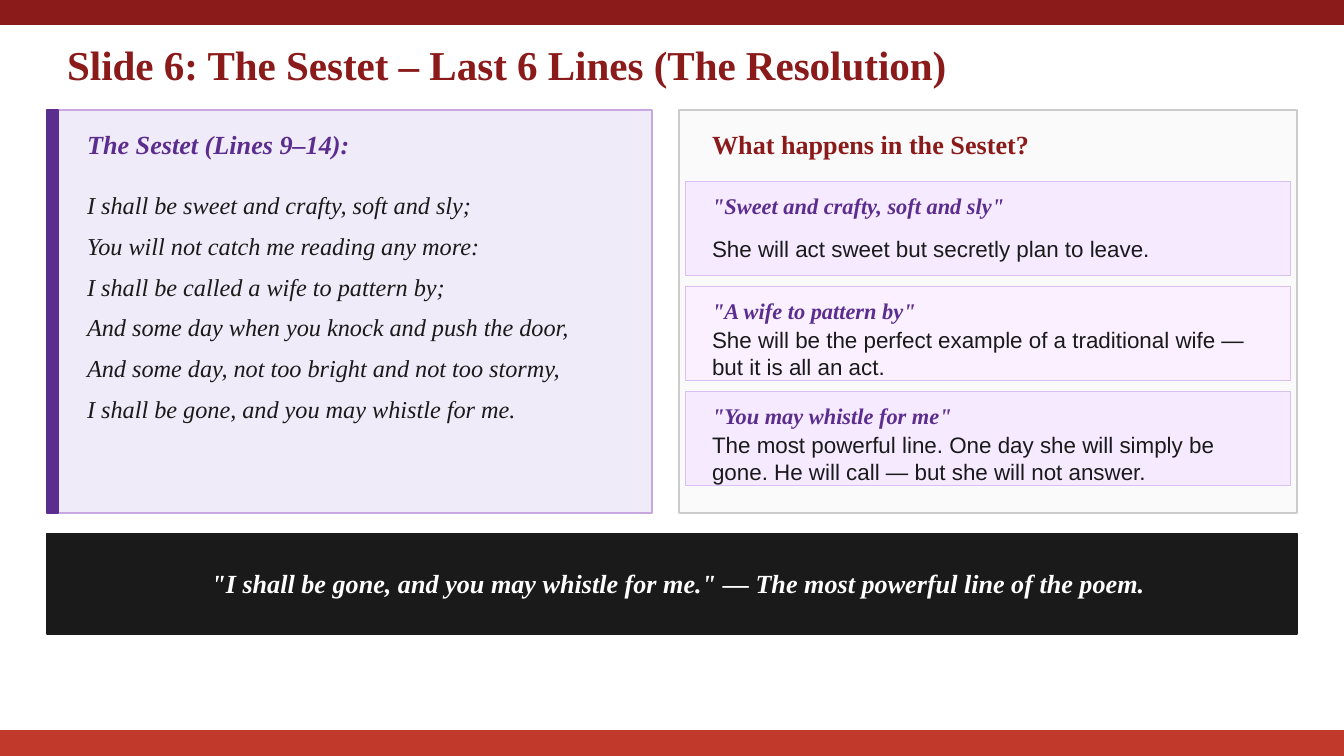
import pptx
import pptx.dml.color
import pptx.enum.shapes
import pptx.enum.text
import pptx.util

Inches = pptx.util.Inches
Pt = pptx.util.Pt
RGBColor = pptx.dml.color.RGBColor
ALIGN = pptx.enum.text.PP_ALIGN
ANCHOR = pptx.enum.text.MSO_ANCHOR

SERIF = "Times New Roman"
SANS = "Arial"
MAROON = RGBColor(0x8B, 0x1A, 0x1A)
RED = RGBColor(0xC0, 0x39, 0x2B)
PURPLE = RGBColor(0x5B, 0x2D, 0x8E)
LAVENDER = RGBColor(0xF0, 0xEB, 0xF8)
LILAC = RGBColor(0xC8, 0xA8, 0xE0)
PALE_LILAC = RGBColor(0xD8, 0xC0, 0xF0)
CARD_VIOLET = RGBColor(0xF5, 0xEA, 0xFF)
CARD_PINK = RGBColor(0xFA, 0xF0, 0xFF)
OFF_WHITE = RGBColor(0xFA, 0xFA, 0xFA)
GREY = RGBColor(0xCC, 0xCC, 0xCC)
INK = RGBColor(0x1A, 0x1A, 0x1A)
WHITE = RGBColor(0xFF, 0xFF, 0xFF)

deck = pptx.Presentation()
deck.slide_width = Inches(10)
deck.slide_height = Inches(10 * 9 / 16)
page = deck.slides.add_slide(deck.slide_layouts[5])


def add_panel(left, top, width, height, fill, line, weight=1):
    panel = page.shapes.add_shape(
        pptx.enum.shapes.MSO_SHAPE.RECTANGLE,
        Inches(left), Inches(top), Inches(width), Inches(height))
    panel.shadow.inherit = False
    panel.fill.solid()
    panel.fill.fore_color.rgb = fill
    panel.line.color.rgb = line
    panel.line.width = Pt(weight)


def write(left, top, width, height, lines, size, color, font=SERIF, bold=False,
          italic=False, align=ALIGN.LEFT, anchor=ANCHOR.MIDDLE, spacing=None, box=None):
    """Fill the given box, or a new text box, with one paragraph per line."""
    if box is None:
        box = page.shapes.add_textbox(0, 0, 0, 0)
    box.left, box.top = Inches(left), Inches(top)
    box.width, box.height = Inches(width), Inches(height)
    frame = box.text_frame
    frame.text = "\n".join(lines)
    frame.word_wrap = True
    frame.auto_size = pptx.enum.text.MSO_AUTO_SIZE.NONE
    frame.vertical_anchor = anchor
    for para in frame.paragraphs:
        para.alignment = align
        para.line_spacing = spacing
        para.font.name = font
        para.font.size = Pt(size)
        para.font.bold = bold
        para.font.italic = italic
        para.font.color.rgb = color


# Top and bottom bands, title
add_panel(0, 0, 10, 0.18, MAROON, MAROON)
add_panel(0, 5.44, 10, 0.18, RED, RED)
write(0.4, 0.25, 9.2, 0.45, ["Slide 6: The Sestet – Last 6 Lines (The Resolution)"],
      22, MAROON, bold=True, box=page.shapes.title)

# Poem
add_panel(0.35, 0.82, 4.5, 3, LAVENDER, LILAC)
add_panel(0.35, 0.82, 0.08, 3, PURPLE, PURPLE)
write(0.55, 0.9, 4.1, 0.35, ["The Sestet (Lines 9–14):"], 14, PURPLE, bold=True, italic=True)
poem = [
    "I shall be sweet and crafty, soft and sly;",
    "You will not catch me reading any more:",
    "I shall be called a wife to pattern by;",
    "And some day when you knock and push the door,",
    "And some day, not too bright and not too stormy,",
    "I shall be gone, and you may whistle for me.",
]
write(0.55, 1.28, 4.1, 2.4, poem, 13, INK, italic=True, anchor=ANCHOR.TOP, spacing=1.4)

# Explanation cards
add_panel(5.05, 0.82, 4.6, 3, OFF_WHITE, GREY)
write(5.2, 0.9, 4.3, 0.35, ["What happens in the Sestet?"], 14, MAROON, bold=True)
cards = [
    ('"Sweet and crafty, soft and sly"',
     "She will act sweet but secretly plan to leave.", CARD_VIOLET),
    ('"A wife to pattern by"',
     "She will be the perfect example of a traditional wife — but it is all an act.",
     CARD_PINK),
    ('"You may whistle for me"',
     "The most powerful line. One day she will simply be gone. "
     "He will call — but she will not answer.", CARD_VIOLET),
]
for index, (quote, meaning, fill) in enumerate(cards):
    top = 1.35 + index * 0.78
    add_panel(5.1, top, 4.5, 0.7, fill, PALE_LILAC, 0.5)
    write(5.2, top + 0.04, 4.3, 0.28, [quote], 12, PURPLE, bold=True, italic=True)
    write(5.2, top + 0.35, 4.3, 0.3, [meaning], 12, INK, font=SANS)

# Closing quote
add_panel(0.35, 3.97, 9.3, 0.75, INK, INK)
write(0.5, 4.05, 9.1, 0.58,
      ['"I shall be gone, and you may whistle for me." — The most powerful line of the poem.'],
      14, WHITE, bold=True, italic=True, align=ALIGN.CENTER)

deck.save("out.pptx")
